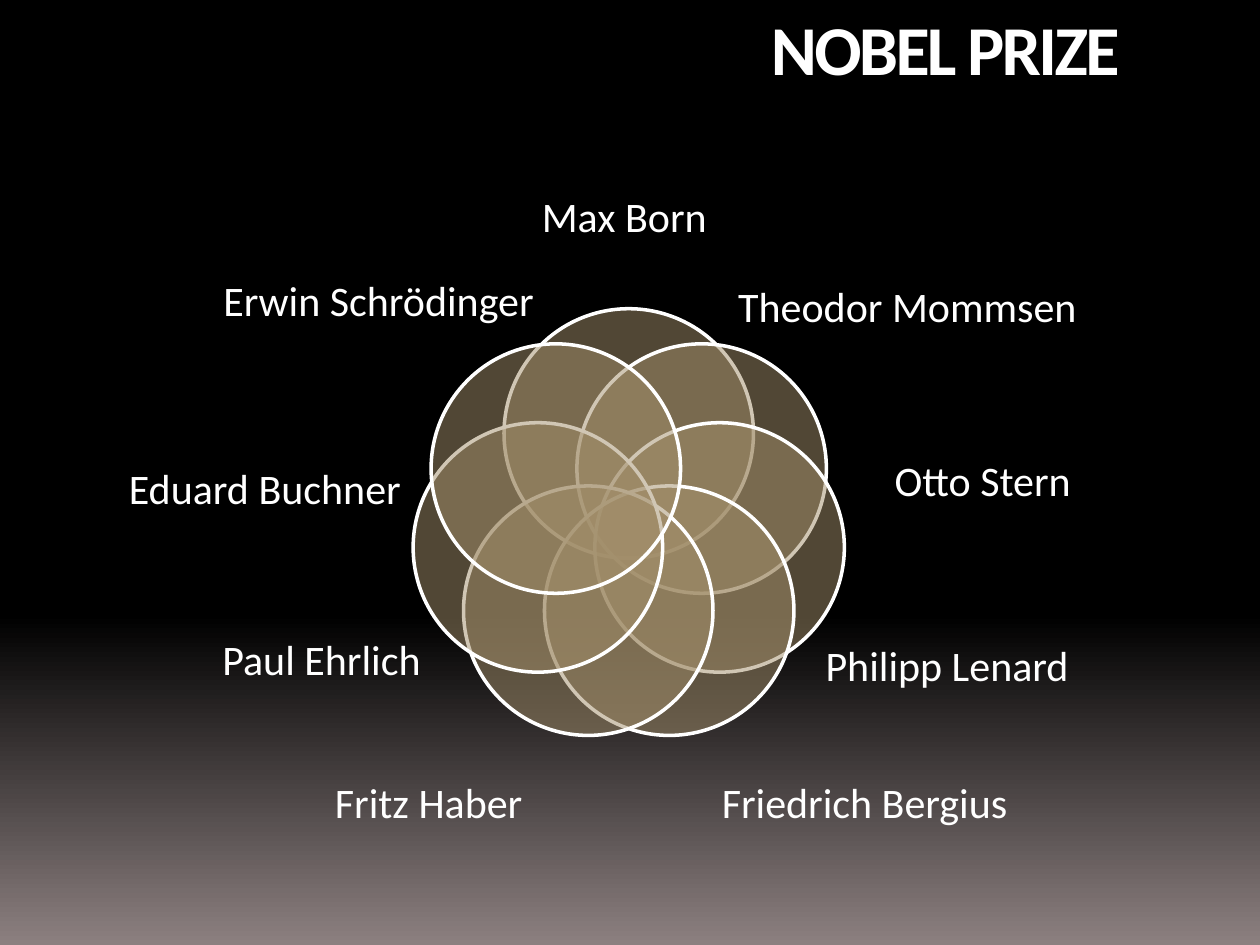
import math

import lxml.etree
import pptx
import pptx.dml.color
import pptx.enum.shapes
import pptx.enum.text
import pptx.oxml.ns
import pptx.util

Inches = pptx.util.Inches
Pt = pptx.util.Pt
Align = pptx.enum.text.PP_ALIGN
Anchor = pptx.enum.text.MSO_ANCHOR

COLORS = {"black": "000000", "floor": "8C8080", "petal": "A28E6A", "white": "FFFFFF"}
FONT = "Calibri"

TITLE = ("NOBEL PRIZE", (6.02, 0, 4.17, 0.76))
RING_LABELS = [
    ("Max Born", (3.82, 1.48, 2.27, 0.52)),
    ("Otto Stern", (6.73, 3.5, 2.14, 0.66)),
    ("Theodor Mommsen ", (5.71, 2.24, 3.06, 0.42)),
    ("Philipp Lenard ", (6.42, 5.07, 2.27, 0.46)),
    ("Eduard Buchner ", (0.75, 3.58, 2.78, 0.63)),
    ("Paul Ehrlich ", (1.54, 5.07, 2.1, 0.36)),
    ("Erwin Schrödinger", (1.3, 2.24, 3.41, 0.32)),
]
LOWER_LABELS = [
    ("Fritz Haber", (2.56, 6.11, 1.97, 0.5)),
    ("Friedrich Bergius", (5.63, 6.11, 2.99, 0.5)),
]

PETAL_COUNT = 7
PETAL_SIZE = 1.98
RING_CENTER = (4.99, 4.18)
RING_RADIUS = 0.74


def rgb(name):
    return pptx.dml.color.RGBColor.from_string(COLORS[name])


def paint_background(slide):
    fill = slide.background.fill
    fill.gradient()
    fill.gradient_angle = 270
    for stop, (position, color) in zip(fill.gradient_stops, [(0.65, "black"), (1, "floor")]):
        stop.position = position
        stop.color.rgb = rgb(color)


def add_text(slide, text, box, size=24, bold=False, align=Align.LEFT,
             anchor=Anchor.TOP, line_spacing=1.0, inset=True, tracking=None):
    shape = slide.shapes.add_textbox(*map(Inches, box))
    frame = shape.text_frame
    frame.word_wrap = True
    frame.vertical_anchor = anchor
    if not inset:
        frame.margin_left = frame.margin_right = 0
        frame.margin_top = frame.margin_bottom = 0
    paragraph = frame.paragraphs[0]
    paragraph.alignment = align
    paragraph.line_spacing = line_spacing
    run = paragraph.add_run()
    run.text = text
    run.font.name = FONT
    run.font.size = Pt(size)
    run.font.bold = bold
    run.font.color.rgb = rgb("white")
    if tracking is not None:
        run.font._element.set("spc", str(int(tracking * 100)))


def add_petal(slide, index):
    angle = 2 * math.pi * index / PETAL_COUNT
    left = RING_CENTER[0] + RING_RADIUS * math.sin(angle) - PETAL_SIZE / 2
    top = RING_CENTER[1] - RING_RADIUS * math.cos(angle) - PETAL_SIZE / 2
    shape = slide.shapes.add_shape(
        pptx.enum.shapes.MSO_SHAPE.OVAL,
        Inches(left), Inches(top), Inches(PETAL_SIZE), Inches(PETAL_SIZE))
    shape.shadow.inherit = False
    shape.fill.solid()
    shape.fill.fore_color.rgb = rgb("petal")
    color = shape._element.spPr.find(".//" + pptx.oxml.ns.qn("a:srgbClr"))
    lxml.etree.SubElement(color, pptx.oxml.ns.qn("a:alpha")).set("val", "50000")
    shape.line.color.rgb = rgb("white")
    shape.line.width = Pt(2)


def main():
    presentation = pptx.Presentation()
    presentation.slide_width = Inches(10)
    presentation.slide_height = Inches(7.5)
    slide = presentation.slides.add_slide(presentation.slide_layouts[6])
    paint_background(slide)
    for index in range(PETAL_COUNT):
        add_petal(slide, index)
    for text, box in RING_LABELS:
        add_text(slide, text, box, align=Align.CENTER, anchor=Anchor.MIDDLE,
                 line_spacing=0.9, inset=False)
    add_text(slide, *TITLE, size=40, bold=True, anchor=Anchor.BOTTOM, tracking=-1.5)
    for text, box in LOWER_LABELS:
        add_text(slide, text, box)
    presentation.save("out.pptx")


if __name__ == "__main__":
    main()
